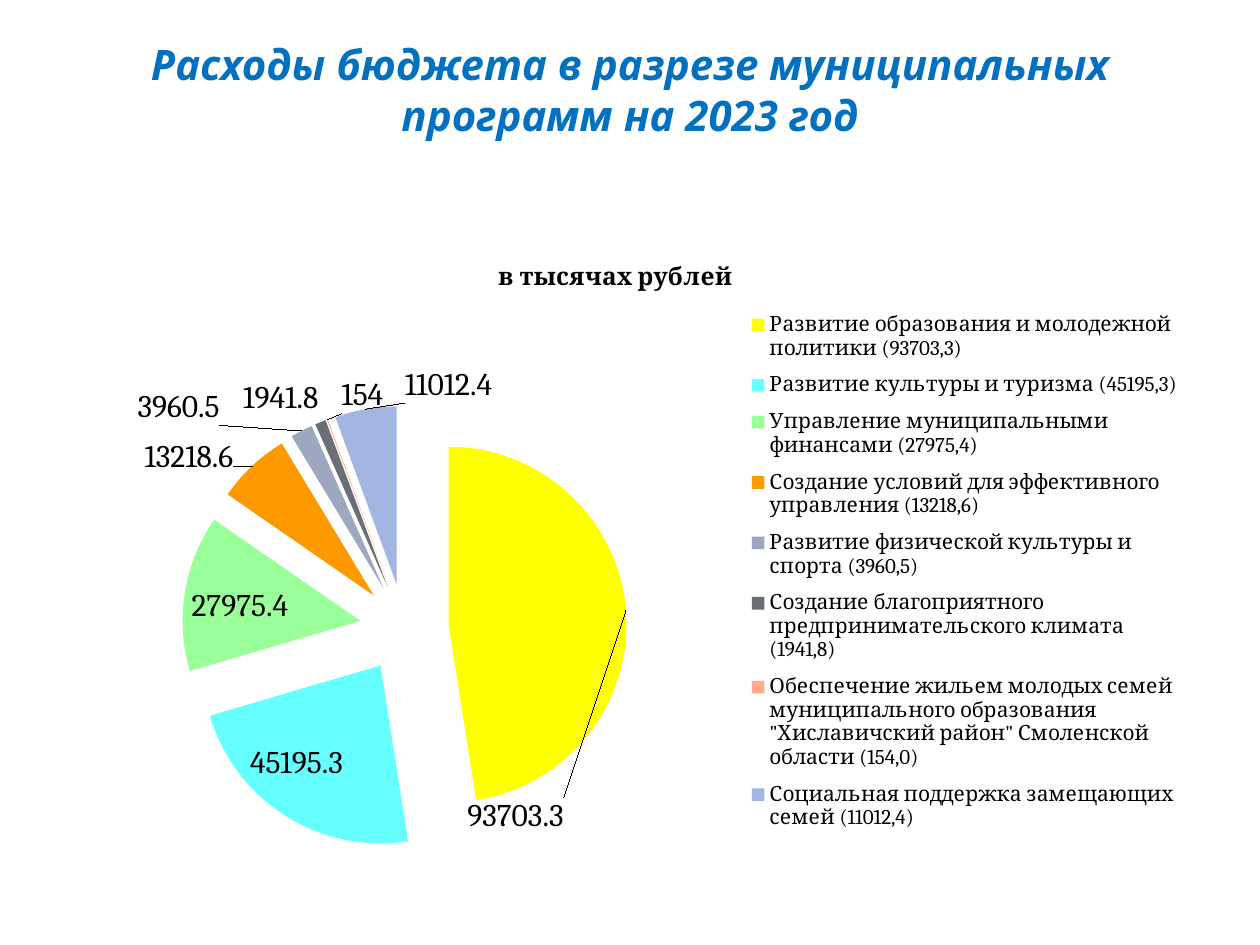
from dataclasses import dataclass
from math import cos, pi, sin

from lxml.etree import SubElement
from pptx import Presentation
from pptx.chart.chart import Chart
from pptx.chart.data import CategoryChartData
from pptx.dml.color import RGBColor
from pptx.enum.chart import XL_CHART_TYPE as ChartType
from pptx.enum.chart import XL_LABEL_POSITION as LabelPosition
from pptx.enum.chart import XL_LEGEND_POSITION as LegendPosition
from pptx.enum.text import MSO_ANCHOR as Anchor
from pptx.enum.text import PP_ALIGN as Align
from pptx.oxml import parse_xml
from pptx.oxml.ns import nsdecls, qn
from pptx.slide import Slide
from pptx.util import Cm, Pt


@dataclass(frozen=True)
class Theme:
    title_color: str = "0070C0"
    text_color: str = "000000"
    title_font: str = "Open Sans"
    chart_font: str = "Cambria"
    title_size: int = 24
    chart_title_size: int = 14
    label_size: int = 18
    legend_size: int = 12


@dataclass(frozen=True)
class Program:
    """A pie slice; its label centre is in percent of the chart."""
    name: str
    amount: float
    color: str
    label_x: float
    label_y: float


@dataclass(frozen=True)
class Area:
    """A rectangle in percent of the chart."""
    x: float
    y: float
    width: float
    height: float


THEME = Theme()
UNIT = "в тысячах рублей"
EXPLOSION = 25
PIE_AREA = Area(10.5, 25, 39.2, 65.6)
LEGEND_AREA = Area(60, 9.5, 39, 80)
PROGRAMS = [
    Program("Развитие образования и молодежной политики (93703,3)",
            93703.3, "FFFF00", 39.9, 85.5),
    Program("Развитие культуры и туризма (45195,3)",
            45195.3, "66FFFF", 20.6, 77.7),
    Program("Управление муниципальными финансами (27975,4)",
            27975.4, "99FF99", 15.6, 54.5),
    Program("Создание условий для эффективного управления (13218,6)",
            13218.6, "FF9900", 11.1, 32.6),
    Program("Развитие физической культуры и спорта (3960,5)",
            3960.5, "9DA7BF", 10.2, 25.2),
    Program("Создание благоприятного предпринимательского климата (1941,8)",
            1941.8, "6A6F76", 19.2, 23.9),
    Program("Обеспечение жильем молодых семей муниципального образования "
            "\"Хиславичский район\" Смоленской области (154,0)",
            154, "FFAC8B", 26.4, 23.5),
    Program("Социальная поддержка замещающих семей (11012,4)",
            11012.4, "A3B5E1", 34, 21.9),
]


def set_layout(parent, after: str | None, **values) -> None:
    """Give a chart element a manual layout, placed after the named child."""
    for old in parent.findall(qn("c:layout")):
        parent.remove(old)
    layout = parse_xml(f"<c:layout {nsdecls('c')}><c:manualLayout/></c:layout>")
    for tag, value in values.items():
        SubElement(layout[0], qn(f"c:{tag}")).set("val", str(value))
    if after is None:
        parent.insert(0, layout)
    else:
        parent.find(qn(after)).addnext(layout)


def set_area(parent, after: str | None, area: Area, **target) -> None:
    set_layout(parent, after, **target, xMode="edge", yMode="edge",
               x=area.x / 100, y=area.y / 100,
               w=area.width / 100, h=area.height / 100)


def add_title(slide: Slide, text: str) -> None:
    title = slide.shapes.title
    title.left, title.top, title.width, title.height = (
        Cm(1.27), Cm(0.41), Cm(22.86), Cm(2.77))
    title.text_frame.vertical_anchor = Anchor.MIDDLE
    title.text_frame.text = text
    paragraph = title.text_frame.paragraphs[0]
    paragraph.alignment = Align.CENTER
    font = paragraph.font
    font.name, font.size = THEME.title_font, Pt(THEME.title_size)
    font.bold = font.italic = True
    font.color.rgb = RGBColor.from_string(THEME.title_color)


def style_slices(chart: Chart) -> None:
    """Colour the exploded slices and move each label to its place."""
    series = chart.plots[0].series[0]
    explosion = parse_xml(f'<c:explosion {nsdecls("c")} val="{EXPLOSION}"/>')
    series._element.find(qn("c:tx")).addnext(explosion)
    series.data_labels.show_value = True

    reach = (0.5 + EXPLOSION / 100) / (1 + EXPLOSION / 100) / 2
    center_x = PIE_AREA.x + PIE_AREA.width / 2
    center_y = PIE_AREA.y + PIE_AREA.height / 2
    total = sum(program.amount for program in PROGRAMS)
    passed = 0.0
    for index, program in enumerate(PROGRAMS):
        point = series.points[index]
        point.format.fill.solid()
        point.format.fill.fore_color.rgb = RGBColor.from_string(program.color)
        point.format.line.fill.background()
        point.data_label.position = LabelPosition.CENTER

        angle = 2 * pi * (passed + program.amount / 2) / total
        passed += program.amount
        slice_x = center_x + PIE_AREA.width * reach * sin(angle)
        slice_y = center_y - PIE_AREA.height * reach * cos(angle)
        label = series._element.findall(f"{qn('c:dLbls')}/{qn('c:dLbl')}")[index]
        set_layout(label, "c:idx",
                   x=round((program.label_x - slice_x) / 100, 4),
                   y=round((program.label_y - slice_y) / 100, 4))


def add_program_chart(slide: Slide) -> None:
    data = CategoryChartData()
    data.categories = [program.name for program in PROGRAMS]
    data.add_series(UNIT, [program.amount for program in PROGRAMS])
    chart = slide.shapes.add_chart(
        ChartType.PIE, Cm(1.27), Cm(4.75), Cm(22.86), Cm(13.69), data).chart
    chart.font.name, chart.font.size = THEME.chart_font, Pt(THEME.label_size)
    chart.font.color.rgb = RGBColor.from_string(THEME.text_color)
    chart.plots[0].vary_by_categories = True

    chart.has_title = True
    chart.chart_title.text_frame.text = UNIT
    font = chart.chart_title.text_frame.paragraphs[0].font
    font.name, font.size = THEME.chart_font, Pt(THEME.chart_title_size)
    font.bold = True
    set_layout(chart.chart_title._element, "c:tx",
               xMode="edge", yMode="edge", x=0.38, y=0.03)

    chart.has_legend = True
    chart.legend.position = LegendPosition.RIGHT
    chart.legend.include_in_layout = False
    chart.legend.font.name = THEME.chart_font
    chart.legend.font.size = Pt(THEME.legend_size)
    set_area(chart.legend._element, "c:legendPos", LEGEND_AREA)

    plot_area = chart._chartSpace.find(f"{qn('c:chart')}/{qn('c:plotArea')}")
    set_area(plot_area, None, PIE_AREA, layoutTarget="inner")
    style_slices(chart)


def main() -> None:
    presentation = Presentation()
    presentation.slide_width, presentation.slide_height = Cm(25.4), Cm(19.05)
    slide = presentation.slides.add_slide(presentation.slide_layouts[5])
    add_title(slide, "Расходы бюджета в разрезе муниципальных программ на 2023 год")
    add_program_chart(slide)
    presentation.save("out.pptx")


if __name__ == "__main__":
    main()
